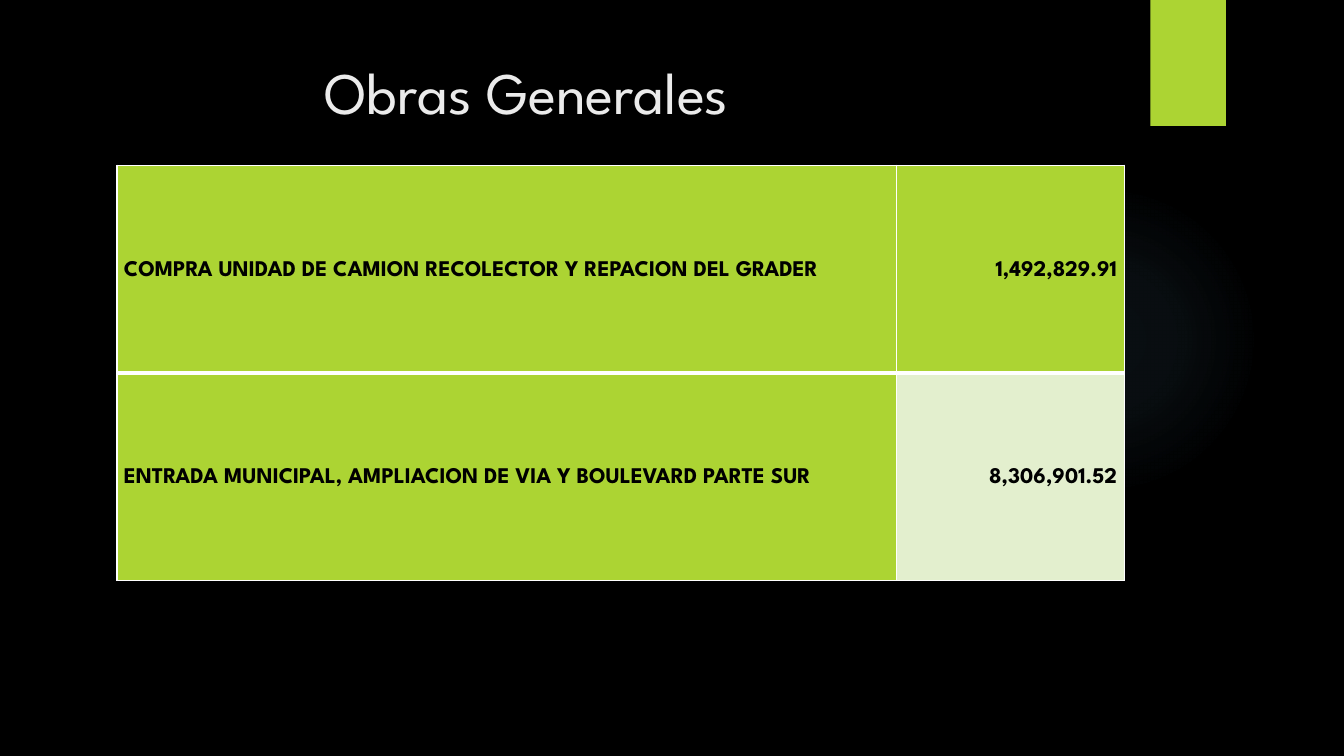
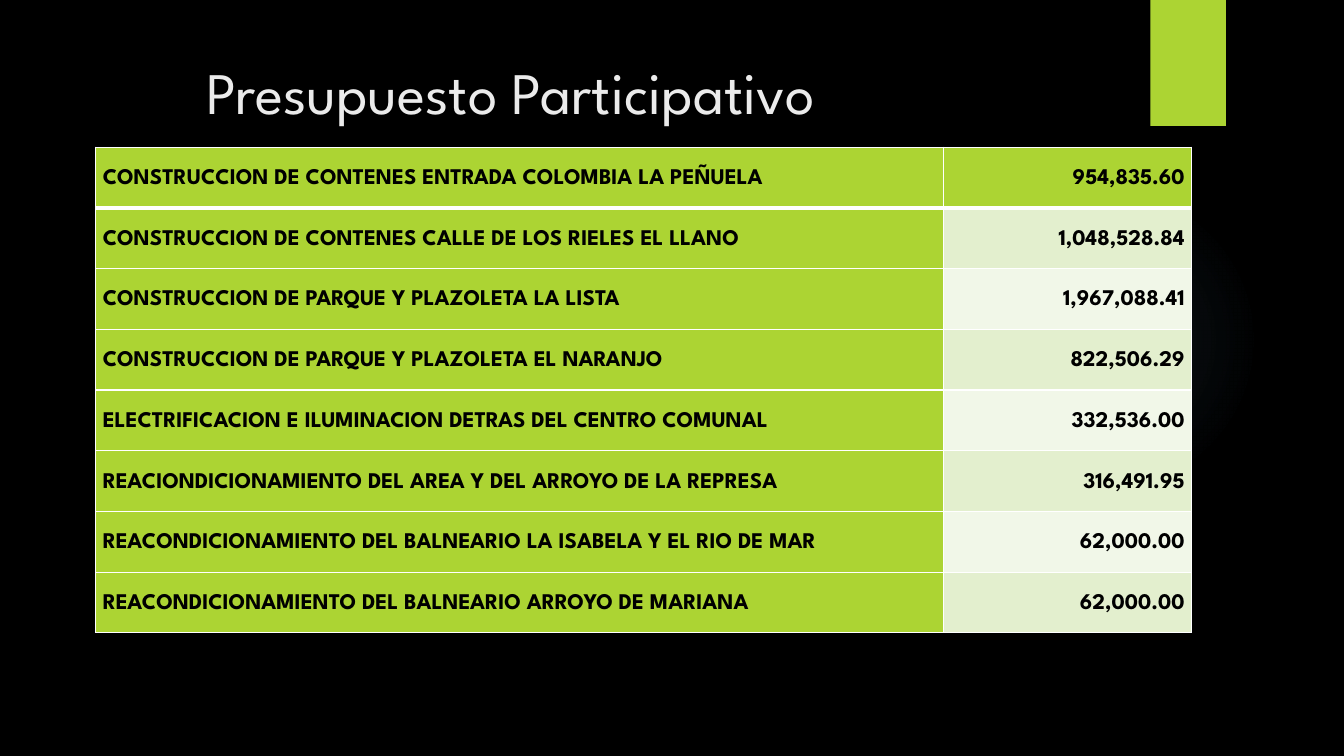
from lxml import etree
from pptx import Presentation, util as u
from pptx.dml.color import RGBColor
from pptx.enum import shapes, text
from pptx.oxml import parse_xml

SPACE = "http://schemas.openxmlformats.org/drawingml/2006/main"
FONT = "League Spartan"
HUES = {"back": "000000", "lime": "ACD433", "pale": "E3EFCE", "mist": "F1F7E8",
        "rule": "FFFFFF", "head": "EBEBEB", "ink": "000000", "glow": "7AC4F0"}
GLOW = [(0, 7), (36, 6), (69, 0)]
TITLE = (0.71, 0.5, 10.29, 1.53)

PAGES = [
    {"title": "Obras Generales", "indent": 2.51,
     "at": (1.16, 1.64), "cols": (7.73, 2.26), "high": 2.06,
     "rows": [
         ("COMPRA UNIDAD DE CAMION RECOLECTOR Y REPACION DEL GRADER", "1,492,829.91"),
         ("ENTRADA MUNICIPAL, AMPLIACION DE VIA Y BOULEVARD PARTE SUR", "8,306,901.52"),
     ]},
    {"title": "Presupuesto Participativo", "indent": 1.34,
     "at": (0.95, 1.46), "cols": (8.41, 2.46), "high": 0.6025,
     "rows": [
         ("CONSTRUCCION DE CONTENES ENTRADA COLOMBIA LA PEÑUELA", "954,835.60"),
         ("CONSTRUCCION DE CONTENES CALLE DE LOS RIELES EL LLANO", "1,048,528.84"),
         ("CONSTRUCCION DE PARQUE Y PLAZOLETA LA LISTA", "1,967,088.41"),
         ("CONSTRUCCION DE PARQUE Y PLAZOLETA EL NARANJO", "822,506.29"),
         ("ELECTRIFICACION E ILUMINACION DETRAS DEL CENTRO COMUNAL", "332,536.00"),
         ("REACIONDICIONAMIENTO DEL AREA Y DEL ARROYO DE LA REPRESA", "316,491.95"),
         ("REACONDICIONAMIENTO DEL BALNEARIO LA ISABELA Y EL RIO DE MAR", "62,000.00"),
         ("REACONDICIONAMIENTO DEL BALNEARIO ARROYO DE MARIANA", "62,000.00"),
     ]},
]


def hue(key):
    return RGBColor.from_string(HUES[key])


def node(tag, body, attrs=""):
    return parse_xml(f'<a:{tag} xmlns:a="{SPACE}" {attrs}>{body}</a:{tag}>')


def tint(key, alpha=100):
    return f'<a:srgbClr val="{HUES[key]}"><a:alpha val="{alpha * 1000}"/></a:srgbClr>'


def style(para, size, key, bold=False):
    for run in para.runs:
        font = run.font
        font.name, font.size, font.bold = FONT, u.Pt(size), bold
        font.color.rgb = hue(key)


def add_form(slide, kind, box):
    form = slide.shapes.add_shape(kind, *map(u.Inches, box))
    form.shadow.inherit = False
    form.fill.solid()
    form.fill.fore_color.rgb = hue("lime")
    form.line.fill.background()
    return form


def add_decor(slide, layout):
    halo = add_form(slide, shapes.MSO_SHAPE.OVAL, (9.41, 1.83, 3.08, 3.08))
    stops = "".join(f'<a:gs pos="{pos * 1000}">{tint("glow", alpha)}</a:gs>'
                    for pos, alpha in GLOW)
    focus = '<a:fillToRect l="50000" t="50000" r="50000" b="50000"/>'
    fill = node("gradFill", f'<a:gsLst>{stops}</a:gsLst><a:path path="circle">{focus}</a:path>')
    old = halo.element.spPr.find(f"{{{SPACE}}}solidFill")
    halo.element.spPr.replace(old, fill)

    tab = add_form(slide, shapes.MSO_SHAPE.RECTANGLE, (11.41, 0, 0.75, 1.25))
    effect = tab.element.spPr.find(f"{{{SPACE}}}effectLst")
    effect.append(node("outerShdw", tint("back", 45),
                       f'blurRad="{u.Pt(3)}" dist="{u.Pt(2)}" dir="5400000" rotWithShape="0"'))
    for spot, form in enumerate((halo, tab), 2):
        layout.element.cSld.spTree.insert(spot, form.element)


def set_master(prs, layout):
    fill = prs.slide_master.background.fill
    fill.solid()
    fill.fore_color.rgb = hue("back")
    title = layout.placeholders[0]
    title.left, title.top, title.width, title.height = map(u.Inches, TITLE)
    frame = title.text_frame
    frame.vertical_anchor = text.MSO_ANCHOR.TOP
    frame.auto_size = text.MSO_AUTO_SIZE.NONE


def add_title(slide, page):
    frame = slide.shapes.title.text_frame
    frame.text = page["title"]
    frame.margin_left = u.Inches(page["indent"])
    para = frame.paragraphs[0]
    para.alignment = text.PP_ALIGN.LEFT
    style(para, 42, "head")


def set_rules(cell, row):
    wide = {"lnL": 1, "lnR": 1, "lnT": 3 if row == 1 else 1, "lnB": 3 if row == 0 else 1}
    props = cell._tc.get_or_add_tcPr()
    for spot, (tag, size) in enumerate(wide.items()):
        paint = f'<a:solidFill>{tint("rule")}</a:solidFill>'
        props.insert(spot, node(tag, paint, f'w="{u.Pt(size)}"'))


def set_cell(cell, words, row, col):
    cell.text = words
    cell.vertical_anchor = text.MSO_ANCHOR.MIDDLE
    cell.margin_left = cell.margin_right = u.Inches(0.07)
    cell.margin_top = cell.margin_bottom = 0
    para = cell.text_frame.paragraphs[0]
    para.alignment = text.PP_ALIGN.RIGHT if col else text.PP_ALIGN.LEFT
    para.line_spacing = 1.15
    style(para, 16, "ink", True)
    band = "pale" if row % 2 else "mist"
    cell.fill.solid()
    cell.fill.fore_color.rgb = hue("lime" if row == 0 or col == 0 else band)
    set_rules(cell, row)


def add_grid(slide, page):
    rows, cols = page["rows"], page["cols"]
    size = (sum(cols), page["high"] * len(rows))
    box = map(u.Inches, page["at"] + size)
    grid = slide.shapes.add_table(len(rows), len(cols), *box).table
    for col, wide in enumerate(cols):
        grid.columns[col].width = u.Inches(wide)
    for row, items in enumerate(rows):
        grid.rows[row].height = u.Inches(page["high"])
        for col, words in enumerate(items):
            set_cell(grid.cell(row, col), words, row, col)


def main():
    prs = Presentation()
    prs.slide_width, prs.slide_height = u.Inches(13.33), u.Inches(7.5)
    layout = prs.slide_layouts[5]
    set_master(prs, layout)
    for index, page in enumerate(PAGES):
        slide = prs.slides.add_slide(layout)
        if index == 0:
            add_decor(slide, layout)
        add_title(slide, page)
        add_grid(slide, page)
    prs.save("out.pptx")


if __name__ == "__main__":
    main()
